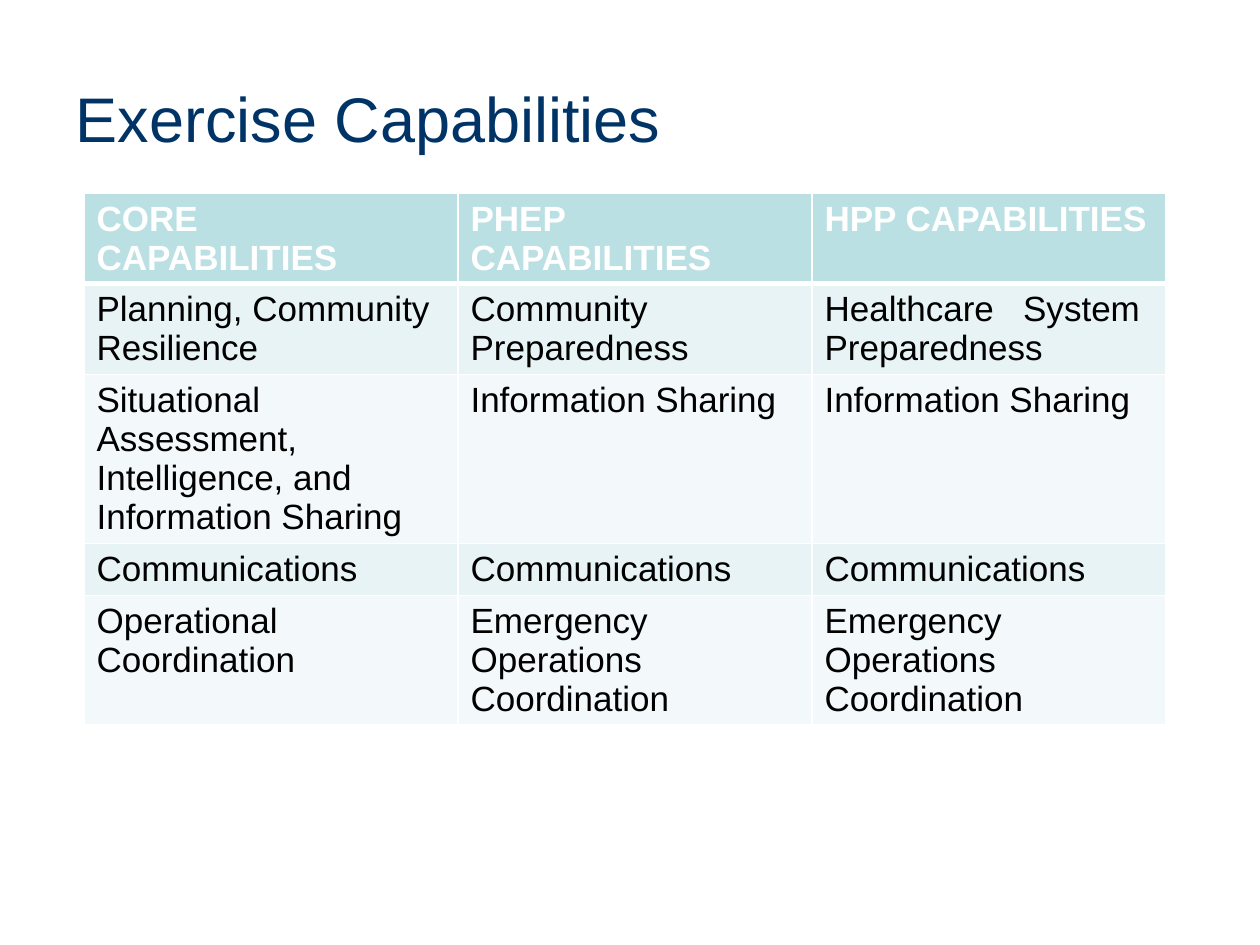
from lxml import etree
from pptx import Presentation
from pptx.dml.color import RGBColor
from pptx.enum.text import MSO_ANCHOR, PP_ALIGN
from pptx.oxml.ns import qn
from pptx.util import Pt

PX = 914400 / 126
LEFT = PP_ALIGN.LEFT
MIDDLE = MSO_ANCHOR.MIDDLE
FONT = "Arial"
NAVY = RGBColor(0x00, 0x33, 0x66)
WHITE = RGBColor(0xFF, 0xFF, 0xFF)
BLACK = RGBColor(0x00, 0x00, 0x00)
TEAL = RGBColor(0xBB, 0xE0, 0xE3)
BANDS = (RGBColor(0xF3, 0xF9, 0xFA), RGBColor(0xE7, 0xF3, 0xF4))

WIDTHS = (374, 354, 354)
ROW = 52
ROWS = (
    ("CORE CAPABILITIES", "PHEP CAPABILITIES", "HPP CAPABILITIES"),
    ("Planning, Community Resilience", "Community Preparedness",
     "Healthcare   System Preparedness"),
    ("Situational Assessment, Intelligence, and Information Sharing",
     "Information Sharing", "Information Sharing"),
    ("Communications",) * 3,
    ("Operational Coordination", "Emergency Operations Coordination",
     "Emergency Operations Coordination"),
)


def px(n):
    return round(n * PX)


def style(par, size, color, bold=False):
    par.alignment = LEFT
    font = par.font
    font.name, font.size, font.bold = FONT, Pt(size), bold
    font.color.rgb = color


def add_title(slide, text, x, y, w, h):
    title = slide.shapes.title
    title.left, title.top, title.width, title.height = map(px, (x, y, w, h))
    frame = title.text_frame
    frame.text = text
    frame.vertical_anchor = MIDDLE
    style(frame.paragraphs[0], 36, NAVY)


def set_edges(cell, top, bottom):
    """Draw white cell borders; top and bottom are widths in points."""
    props = cell._tc.get_or_add_tcPr()
    for side, width in (("L", 1), ("R", 1), ("T", top), ("B", bottom)):
        line = etree.SubElement(props, qn(f"a:ln{side}"), w=str(Pt(width)))
        fill = etree.SubElement(line, qn("a:solidFill"))
        etree.SubElement(fill, qn("a:srgbClr"), val=str(WHITE))


def add_grid(slide, x, y):
    table = slide.shapes.add_table(
        len(ROWS), len(WIDTHS), px(x), px(y),
        px(sum(WIDTHS)), px(ROW * len(ROWS))).table
    for col, width in zip(table.columns, WIDTHS):
        col.width = px(width)
    for r, texts in enumerate(ROWS):
        head = r == 0
        for c, text in enumerate(texts):
            cell = table.cell(r, c)
            cell.text = text
            set_edges(cell, 3 if r == 1 else 1, 3 if head else 1)
            cell.fill.solid()
            cell.fill.fore_color.rgb = TEAL if head else BANDS[r % 2]
            style(cell.text_frame.paragraphs[0], 20,
                  WHITE if head else BLACK, head)


def main():
    deck = Presentation()
    deck.slide_width, deck.slide_height = px(1260), px(945)
    slide = deck.slides.add_slide(deck.slide_layouts[5])
    add_title(slide, "Exercise Capabilities", 63, 38, 1134, 158)
    add_grid(slide, 84, 193)
    deck.save("out.pptx")


if __name__ == "__main__":
    main()
